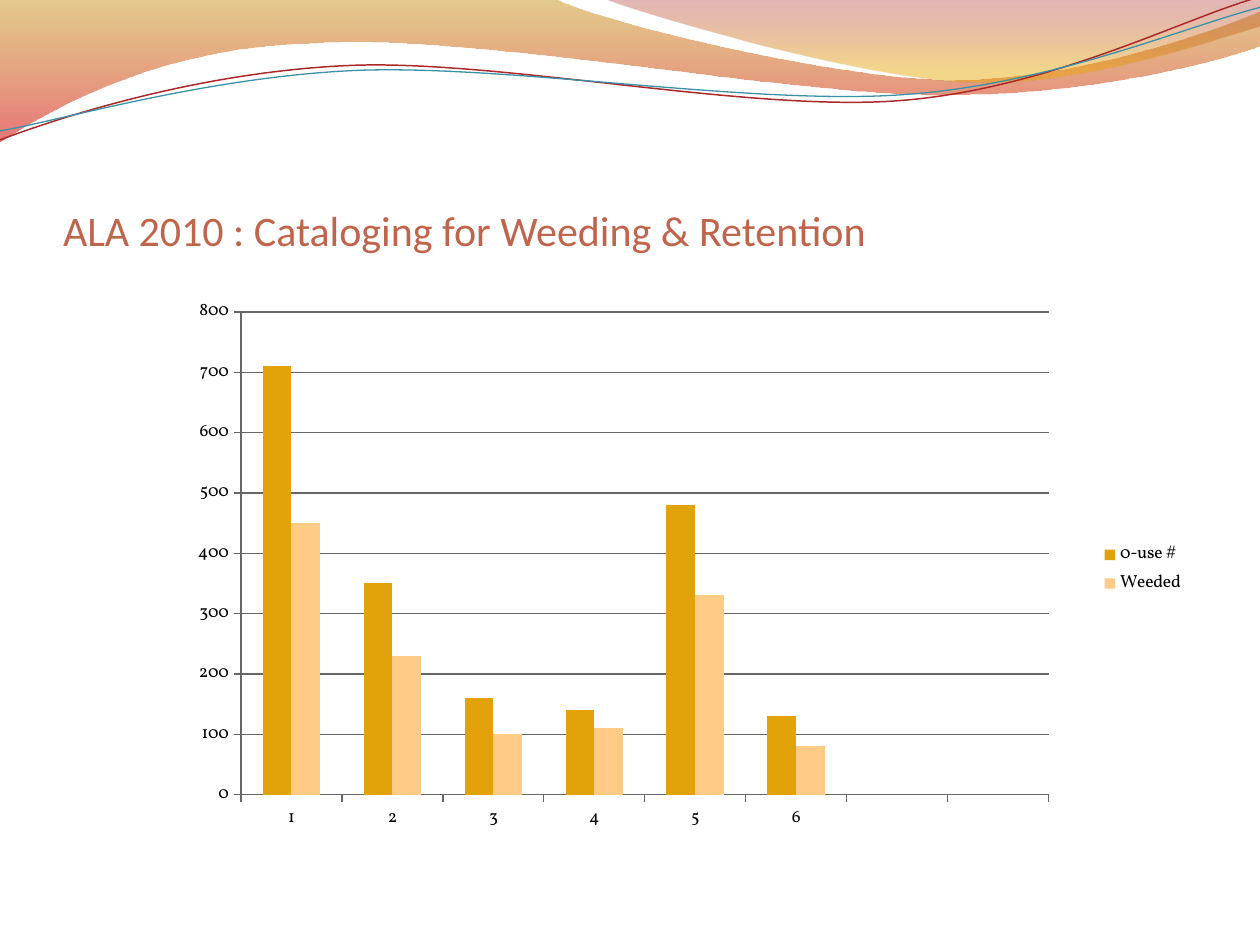
from dataclasses import dataclass
from math import cos, radians, sin

from lxml.etree import SubElement
from pptx import Presentation
from pptx.chart.data import CategoryChartData
from pptx.dml.color import RGBColor
from pptx.enum.chart import XL_CHART_TYPE as ChartType
from pptx.enum.chart import XL_LEGEND_POSITION as LegendPosition
from pptx.enum.chart import XL_TICK_MARK as TickMark
from pptx.enum.text import MSO_ANCHOR as Anchor
from pptx.enum.text import PP_ALIGN as Align
from pptx.oxml import parse_xml
from pptx.oxml.ns import nsdecls, qn
from pptx.util import Cm, Pt

TITLE_ONLY = 5


@dataclass(frozen=True)
class Theme:
    title_font: str = "Calibri"
    chart_font: str = "Vollkorn"
    title_size: int = 24
    chart_size: int = 10
    title: str = "C0654C"
    text: str = "000000"
    axis: str = "666666"
    series: tuple = ("E2A20A", "FFCB86")
    # Gradient stops: position, colour, opacity in percent
    band: tuple = ((0, "C38B00", 45), (1, "D60305", 55))
    wedge: tuple = ((0, "A11112", 30), (0.8, "E9A600", 45))
    red_line: str = "AC2829"
    teal_line: str = "3891A7"


def rgb(value):
    return RGBColor.from_string(value)


def rotate(point, center, degrees):
    angle = radians(degrees)
    dx, dy = point[0] - center[0], point[1] - center[1]
    return (center[0] + dx * cos(angle) - dy * sin(angle),
            center[1] + dx * sin(angle) + dy * cos(angle))


class SlideBuilder:
    def __init__(self, slide, theme):
        self.slide = slide
        self.theme = theme

    def outline(self, start, segments, close):
        """Draw lines (one point) and cubic curves (three points)."""
        points = [(Cm(x), Cm(y)) for segment in segments for x, y in segment]
        builder = self.slide.shapes.build_freeform(Cm(start[0]), Cm(start[1]))
        builder.add_line_segments(points, close=close)
        shape = builder.convert_to_shape()
        shape.shadow.inherit = False
        # Join each group of three line ends into one cubic curve
        lines = shape._element.spPr.iter(qn("a:lnTo"))
        lines = iter(list(lines))
        for segment in segments:
            group = [next(lines) for _ in segment]
            if len(group) == 3:
                curve = parse_xml(f'<a:cubicBezTo {nsdecls("a")}/>')
                group[0].addprevious(curve)
                for line in group:
                    curve.append(line[0])
                    line.getparent().remove(line)
        return shape

    def wave(self, start, segments, stops):
        shape = self.outline(start, segments, True)
        shape.line.fill.background()
        shape.fill.gradient()
        shape.fill.gradient_angle = 270
        for stop, (position, color, _) in zip(shape.fill.gradient_stops, stops):
            stop.position = position
            stop.color.rgb = rgb(color)
        colors = shape._element.spPr.iter(qn("a:srgbClr"))
        for element, (_, _, opacity) in zip(colors, stops):
            SubElement(element, qn("a:alpha")).set("val", str(opacity * 1000))

    def curve(self, start, segments, color, width, center, rotation):
        level = [[rotate(point, center, -rotation) for point in segment]
                 for segment in segments]
        shape = self.outline(rotate(start, center, -rotation), level, False)
        shape.rotation = rotation
        shape.fill.background()
        shape.line.color.rgb = rgb(color)
        shape.line.width = Pt(width)

    def title(self, text, left, top, width, height):
        shape = self.slide.shapes.title
        self.slide.shapes._spTree.append(shape._element)  # in front of the waves
        shape.left, shape.top = Cm(left), Cm(top)
        shape.width, shape.height = Cm(width), Cm(height)
        frame = shape.text_frame
        frame.text = text
        frame.word_wrap = True
        frame.vertical_anchor = Anchor.BOTTOM
        frame.margin_left = frame.margin_right = frame.margin_bottom = 0
        frame.margin_top = Cm(0.13)
        paragraph = frame.paragraphs[0]
        paragraph.alignment = Align.LEFT
        font = paragraph.runs[0].font
        font.name = self.theme.title_font
        font.size = Pt(self.theme.title_size)
        font.color.rgb = rgb(self.theme.title)

    def column_chart(self, categories, series, box, plot_box):
        data = CategoryChartData()
        data.categories = categories
        for name, values in series.items():
            data.add_series(name, values)
        chart = self.slide.shapes.add_chart(
            ChartType.COLUMN_CLUSTERED, *map(Cm, box), data).chart
        chart.has_title = False
        chart.font.name = self.theme.chart_font
        chart.font.size = Pt(self.theme.chart_size)
        chart.font.color.rgb = rgb(self.theme.text)
        chart.has_legend = True
        chart.legend.position = LegendPosition.RIGHT
        chart.legend.include_in_layout = False

        # Columns
        plot = chart.plots[0]
        plot.vary_by_categories = False
        plot.gap_width = 150
        plot.overlap = 0
        for column, color in zip(plot.series, self.theme.series):
            column.format.fill.solid()
            column.format.fill.fore_color.rgb = rgb(color)
            column.invert_if_negative = False

        # Axes and gridlines
        value_axis = chart.value_axis
        value_axis.minimum_scale, value_axis.maximum_scale = 0, 800
        value_axis.major_unit = 100
        value_axis.has_major_gridlines = True
        for axis in (chart.category_axis, value_axis):
            axis.major_tick_mark = TickMark.OUTSIDE
            axis.minor_tick_mark = TickMark.NONE
        for part in (chart.category_axis, value_axis, value_axis.major_gridlines):
            part.format.line.color.rgb = rgb(self.theme.axis)
            part.format.line.width = Pt(0.75)

        # Fixed inner plot area, as fractions of the chart
        _, _, width, height = box
        sizes = "".join(f'<c:{tag} val="{length / whole:.4f}"/>' for tag, length, whole
                        in zip("xywh", plot_box, (width, height) * 2))
        layout = parse_xml(
            f'<c:layout {nsdecls("c")}><c:manualLayout>'
            '<c:layoutTarget val="inner"/><c:xMode val="edge"/><c:yMode val="edge"/>'
            f'{sizes}</c:manualLayout></c:layout>')
        plot_area = chart._chartSpace.chart.plotArea
        for old in plot_area.findall(qn("c:layout")):
            plot_area.remove(old)
        plot_area.insert(0, layout)


def main():
    theme = Theme()
    presentation = Presentation()
    presentation.slide_width, presentation.slide_height = Cm(25.4), Cm(19.05)
    slide = presentation.slides.add_slide(presentation.slide_layouts[TITLE_ONLY])
    builder = SlideBuilder(slide, theme)

    # Gradient waves along the top
    builder.wave((0, 0), [
        [(11.18, -0.03)],
        [(12.09, 0.43), (16.87, 1.6), (19.25, 1.6)],
        [(21.67, 1.6), (24.33, 0.66), (25.4, 0.23)],
        [(25.43, 0.91)],
        [(24.97, 1.12), (22.1, 1.93), (18.95, 1.91)],
        [(15.8, 1.91), (9.7, 0.71), (6.53, 0.86)],
        [(3.28, 0.91), (1.17, 2.11), (-0.03, 2.87)]], theme.band)
    builder.wave((12.17, -0.03), [
        [(12.93, 0.28), (17.32, 1.57), (19.53, 1.65)],
        [(21.74, 1.75), (24.41, 0.81), (25.4, 0.53)],
        [(25.4, 0)]], theme.wedge)

    # Thin tilted curves
    builder.curve((0, 2.82), [
        [(1.22, 2.36), (4.01, 1.45), (7.04, 1.32)],
        [(10.03, 1.19), (15.06, 2.26), (18.11, 2.03)],
        [(21.16, 1.8), (23.83, 0.38), (25.35, -0.05)]],
        theme.red_line, 0.85, (12.67, 1.46), -2.7)
    builder.curve((0, 2.64), [
        [(1.19, 2.44), (4.17, 1.55), (7.19, 1.42)],
        [(10.24, 1.3), (15.16, 2.13), (18.21, 1.91)],
        [(21.23, 1.7), (23.9, 0.53), (25.4, 0.15)]],
        theme.teal_line, 0.75, (12.69, 1.5), -2.7)

    builder.title("ALA 2010 : Cataloging for Weeding & Retention", 1.27, 1.96, 22.86, 3.18)

    # Six filled categories, then two empty places
    builder.column_chart(
        ["1", "2", "3", "4", "5", "6", "", ""],
        {"0-use #": [710, 350, 160, 140, 480, 130, None, None],
         "Weeded": [450, 230, 100, 110, 330, 80, None, None]},
        (1.27, 5.38, 22.86, 12.19), (3.59, 0.91, 16.28, 9.73))

    presentation.save("out.pptx")


if __name__ == "__main__":
    main()
